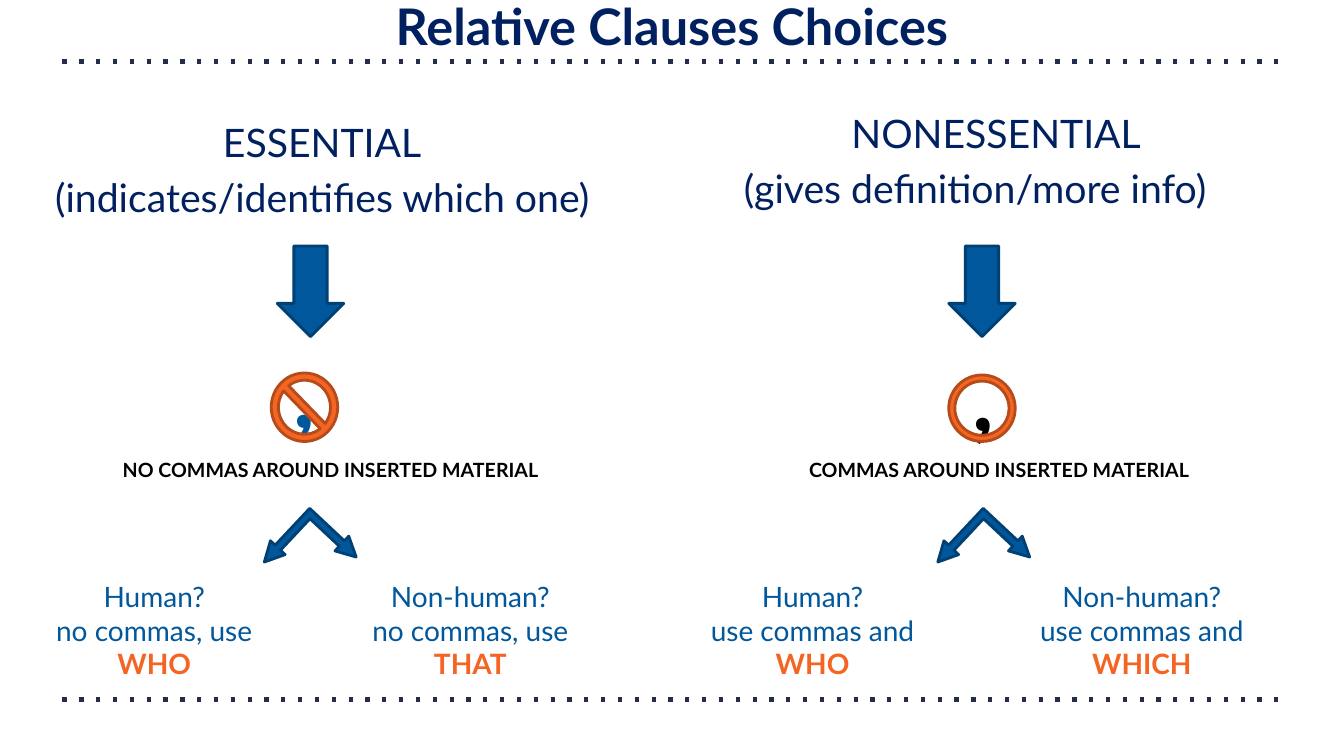
from dataclasses import dataclass

from lxml import etree
from pptx import Presentation
from pptx import util as u
from pptx.dml import color
from pptx.enum import shapes, text
from pptx.oxml import ns

SHAPE = shapes.MSO_SHAPE
ALIGN = text.PP_ALIGN
ANCHOR = text.MSO_ANCHOR


@dataclass(frozen=True)
class Theme:
    font: str = "Lato"
    navy: str = "002060"
    blue: str = "01579B"
    blue_edge: str = "014073"
    orange: str = "F46524"
    orange_edge: str = "B54B1B"
    rule: str = "232D4B"
    black: str = "000000"
    title: int = 36
    heading: int = 28
    outcome: int = 20
    label: int = 14
    comma: int = 66
    outline: int = 2
    rule_width: int = 3


THEME = Theme()


@dataclass(frozen=True)
class Box:
    left: float
    top: float
    width: float
    height: float

    def emu(self) -> list[u.Length]:
        return [u.Inches(v) for v in (self.left, self.top, self.width, self.height)]


@dataclass(frozen=True)
class Line:
    words: str
    size: int
    color: str
    bold: bool = False
    align: ALIGN = ALIGN.CENTER
    indent: float = 0
    right_indent: float = 0
    after: int = 0


@dataclass(frozen=True)
class Outcome:
    box: Box
    question: str
    pronoun: str


@dataclass(frozen=True)
class Clause:
    heading: tuple[Line, Line]
    heading_box: Box
    heading_anchor: ANCHOR
    down_arrow_left: float
    comma_box: Box
    comma_color: str
    sign: SHAPE
    sign_box: Box
    sign_thickness: float
    label: str
    label_center: float
    fork_left: float
    advice: str
    outcomes: tuple[Outcome, Outcome]


def heading_line(words: str, indent: float = 0.25, right_indent: float = 0) -> Line:
    return Line(words, THEME.heading, THEME.navy, indent=indent,
                right_indent=right_indent, after=6)


CLAUSES = (
    Clause(
        heading=(heading_line("ESSENTIAL"),
                 heading_line("(indicates/identifies which one)")),
        heading_box=Box(0.07, 0.98, 6, 1.31), heading_anchor=ANCHOR.BOTTOM,
        down_arrow_left=2.75,
        comma_box=Box(2.45, 3.22, 0.77, 1.31), comma_color=THEME.blue,
        sign=SHAPE.NO_SYMBOL, sign_box=Box(2.69, 3.7, 0.66, 0.68), sign_thickness=0.109,
        label="NO COMMAS AROUND INSERTED MATERIAL", label_center=3.28,
        fork_left=2.71, advice="no commas, use",
        outcomes=(Outcome(Box(0.35, 5.64, 2.36, 1.21), "Human?", "WHO"),
                  Outcome(Box(3.42, 5.64, 2.49, 1.21), "Non-human?", "THAT")),
    ),
    Clause(
        heading=(heading_line("NONESSENTIAL"),
                 heading_line("(gives definition/more info)", 0, 0.17)),
        heading_box=Box(6.82, 0.98, 5.87, 1.31), heading_anchor=ANCHOR.TOP,
        down_arrow_left=9.41,
        comma_box=Box(9.19, 3.25, 0.77, 1.31), comma_color=THEME.black,
        sign=SHAPE.DONUT, sign_box=Box(9.41, 3.72, 0.66, 0.66), sign_thickness=0.093,
        label="COMMAS AROUND INSERTED MATERIAL", label_center=9.91,
        fork_left=9.39, advice="use commas and",
        outcomes=(Outcome(Box(6.88, 5.64, 2.36, 1.21), "Human?", "WHO"),
                  Outcome(Box(10.08, 5.64, 2.49, 1.21), "Non-human?", "WHICH")),
    ),
)


def add_text(slide, box: Box, lines: tuple[Line, ...], anchor: ANCHOR = ANCHOR.BOTTOM) -> None:
    frame = slide.shapes.add_textbox(*box.emu()).text_frame
    frame.word_wrap = True
    frame.vertical_anchor = anchor
    frame.margin_left = frame.margin_right = u.Inches(0.1)
    frame.margin_top = frame.margin_bottom = u.Inches(0.1)
    for index, line in enumerate(lines):
        paragraph = frame.add_paragraph() if index else frame.paragraphs[0]
        paragraph.alignment = line.align
        paragraph.space_after = u.Pt(line.after)
        properties = paragraph._p.get_or_add_pPr()
        properties.set("marL", str(u.Inches(line.indent)))
        properties.set("marR", str(u.Inches(line.right_indent)))
        run = paragraph.add_run()
        run.text = line.words
        run.font.name = THEME.font
        run.font.size = u.Pt(line.size)
        run.font.bold = line.bold
        run.font.color.rgb = color.RGBColor.from_string(line.color)


def add_symbol(slide, preset: SHAPE, box: Box, fill: str, edge: str,
               adjustments: tuple[float, ...] = (), rotation: float = 0) -> None:
    symbol = slide.shapes.add_shape(preset, *box.emu())
    symbol.shadow.inherit = False
    symbol.fill.solid()
    symbol.fill.fore_color.rgb = color.RGBColor.from_string(fill)
    symbol.line.color.rgb = color.RGBColor.from_string(edge)
    symbol.line.width = u.Pt(THEME.outline)
    symbol.rotation = rotation
    for index, value in enumerate(adjustments):
        symbol.adjustments[index] = value


def add_dotted_rule(slide, top: float) -> None:
    rule = slide.shapes.add_connector(shapes.MSO_CONNECTOR.STRAIGHT, u.Inches(0.62),
                                      u.Inches(top), u.Inches(12.72), u.Inches(top))
    rule.line.color.rgb = color.RGBColor.from_string(THEME.rule)
    rule.line.width = u.Pt(THEME.rule_width)
    properties = rule._element.spPr
    outline = properties.find(ns.qn("a:ln"))
    etree.SubElement(outline, ns.qn("a:prstDash")).set("val", "dot")
    etree.SubElement(properties, ns.qn("a:effectLst"))


def add_clause(slide, clause: Clause) -> None:
    """Draw one column, from its heading down to the two pronoun choices."""
    add_text(slide, clause.heading_box, clause.heading, clause.heading_anchor)
    add_symbol(slide, SHAPE.DOWN_ARROW, Box(clause.down_arrow_left, 2.44, 0.66, 0.9),
               THEME.blue, THEME.blue_edge)
    add_text(slide, clause.comma_box,
             (Line(",", THEME.comma, clause.comma_color, True, ALIGN.RIGHT),))
    add_symbol(slide, clause.sign, clause.sign_box, THEME.orange, THEME.orange_edge,
               (clause.sign_thickness,))
    add_text(slide, Box(clause.label_center - 2.5, 4.44, 5, 0.44),
             (Line(clause.label, THEME.label, THEME.black, True),))
    add_symbol(slide, SHAPE.LEFT_UP_ARROW, Box(clause.fork_left, 5.1, 0.73, 0.76),
               THEME.blue, THEME.blue_edge, (0.1, 0.137, 0.267), 223.2)
    for outcome in clause.outcomes:
        add_text(slide, outcome.box, (
            Line(outcome.question, THEME.outcome, THEME.blue),
            Line(clause.advice, THEME.outcome, THEME.blue),
            Line(outcome.pronoun, THEME.outcome, THEME.orange, True),
        ))


def main() -> None:
    deck = Presentation()
    deck.slide_width, deck.slide_height = u.Inches(13.33), u.Inches(7.5)
    slide = deck.slides.add_slide(deck.slide_layouts[6])
    for top in (0.61, 6.94):
        add_dotted_rule(slide, top)
    add_text(slide, Box(0, -0.17, 13.33, 0.84),
             (Line("Relative Clauses Choices", THEME.title, THEME.navy, True),),
             ANCHOR.MIDDLE)
    for clause in CLAUSES:
        add_clause(slide, clause)
    deck.save("out.pptx")


if __name__ == "__main__":
    main()
